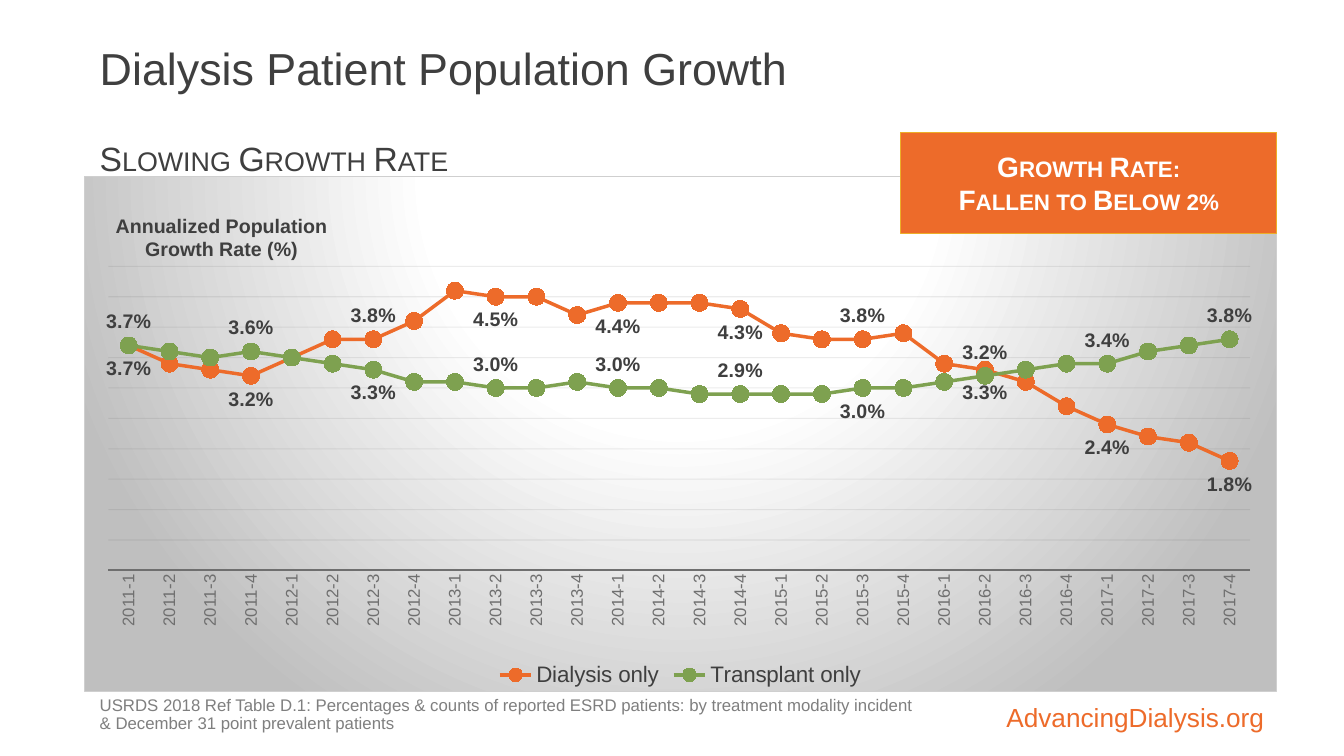
from dataclasses import dataclass

from lxml import etree
from pptx import Presentation
from pptx import util as u
from pptx.chart.data import CategoryChartData
from pptx.dml.color import RGBColor
from pptx.enum import chart as ch, shapes, text
from pptx.oxml import parse_xml
from pptx.oxml.ns import nsdecls, qn


@dataclass(frozen=True)
class Theme:
    font: str = "Arial"
    ink: str = "3F3F3F"
    muted: str = "7F7F7F"
    axis: str = "6F6F6F"
    grid: str = "494949"
    border: str = "CFCFCF"
    panel: str = "BFBFBF"
    white: str = "FFFFFF"
    orange: str = "ED6B2A"
    gold: str = "EDAE28"
    green: str = "7EA150"
    title: float = 32
    subtitle: float = 24
    callout: float = 20
    link: float = 18.7
    legend: float = 16
    label: float = 14
    small: float = 12


T = Theme()
PX = 9525  # EMU per pixel, 96 pixels to the inch

QUARTERS = [f"{year}-{q}" for year in range(2011, 2018) for q in range(1, 5)]
DIALYSIS = [3.7, 3.4, 3.3, 3.2, 3.5, 3.8, 3.8, 4.1, 4.6, 4.5, 4.5, 4.2, 4.4, 4.4,
            4.4, 4.3, 3.9, 3.8, 3.8, 3.9, 3.4, 3.3, 3.1, 2.7, 2.4, 2.2, 2.1, 1.8]
TRANSPLANT = [3.7, 3.6, 3.5, 3.6, 3.5, 3.4, 3.3, 3.1, 3.1, 3.0, 3.0, 3.1, 3.0, 3.0,
              2.9, 2.9, 2.9, 2.9, 3.0, 3.0, 3.1, 3.2, 3.3, 3.4, 3.4, 3.6, 3.7, 3.8]
LABEL_EVERY = 3
SWAPPED = [QUARTERS.index(q) for q in ("2012-3", "2015-3")]  # labels on the other side
ABOVE, BELOW = ch.XL_LABEL_POSITION.ABOVE, ch.XL_LABEL_POSITION.BELOW


def px(*values):
    return [v * PX for v in values]


def rgb(colour):
    return RGBColor.from_string(colour)


def style_font(font, size, colour, bold=False):
    font.name, font.size, font.bold = T.font, u.Pt(size), bold
    font.color.rgb = rgb(colour)


def write(sp, lines, colour, sizes, align=text.PP_ALIGN.LEFT, anchor=text.MSO_ANCHOR.TOP,
          bold=False, small_caps=(), spacing=1.0, insets=(7, 4, 7, 4)):
    """Fill a shape with one paragraph per line; small_caps lists line numbers."""
    tf = sp.text_frame
    tf.text = "\n".join(lines)
    tf.word_wrap, tf.auto_size = True, text.MSO_AUTO_SIZE.NONE
    tf.vertical_anchor = anchor
    tf.margin_left, tf.margin_top, tf.margin_right, tf.margin_bottom = px(*insets)
    for i, (p, size) in enumerate(zip(tf.paragraphs, sizes)):
        p.alignment, p.line_spacing, p.space_before = align, spacing, u.Pt(0)
        for r in p.runs:
            style_font(r.font, size, colour, bold)
            if i in small_caps:
                r.font._element.set("cap", "small")
    return tf


def add_text(s, box, lines, colour, size, **style):
    sp = s.shapes.add_textbox(*px(*box))
    write(sp, lines, colour, [size] * len(lines), **style)


def add_title(s):
    sp = s.shapes.title
    sp.left, sp.top, sp.width, sp.height = px(88, 38, 679, 139)
    tf = write(sp, ["Dialysis Patient Population Growth", "Slowing Growth Rate"], T.ink,
               [T.title, T.subtitle], anchor=text.MSO_ANCHOR.MIDDLE,
               small_caps=(1,), spacing=0.9)
    tf.paragraphs[1].space_before = u.Pt(34)


def add_callout(s):
    sp = s.shapes.add_shape(shapes.MSO_SHAPE.RECTANGLE, *px(858, 126, 358, 96))
    sp.shadow.inherit = False
    sp.fill.solid()
    sp.fill.fore_color.rgb = rgb(T.orange)
    sp.line.color.rgb = rgb(T.gold)
    sp.line.width = u.Pt(0.5)
    write(sp, ["Growth Rate:", "Fallen to Below 2%"], T.white, [T.callout] * 2,
          align=text.PP_ALIGN.CENTER, anchor=text.MSO_ANCHOR.MIDDLE,
          bold=True, small_caps=(0, 1))


def style_series(series, colour, position, swapped_position):
    series.smooth = False
    series.format.line.color.rgb = rgb(colour)
    series.format.line.width = u.Pt(2.5)
    marker = series.marker
    marker.style, marker.size = ch.XL_MARKER_STYLE.CIRCLE, 12
    marker.format.fill.solid()
    marker.format.fill.fore_color.rgb = rgb(colour)
    marker.format.line.color.rgb = rgb(colour)

    labels = series.data_labels
    labels.show_value, labels.position = True, position
    labels.number_format, labels.number_format_is_linked = "0.0%", False
    style_font(labels.font, T.label, T.ink, bold=True)
    # Only every third quarter keeps its label
    unlabelled = [i for i in range(len(QUARTERS)) if i % LABEL_EVERY]
    for place, i in enumerate(unlabelled):
        labels._element.insert(place, parse_xml(
            f'<c:dLbl {nsdecls("c")}><c:idx val="{i}"/><c:delete val="1"/></c:dLbl>'))
    # Where the lines part the other way, labels move to the outer side
    for i in SWAPPED:
        label = series.points[i].data_label
        style_font(label.font, T.label, T.ink, bold=True)
        label.position = swapped_position


def style_axes(chart):
    cat, val = chart.category_axis, chart.value_axis
    cat.major_tick_mark = cat.minor_tick_mark = ch.XL_TICK_MARK.NONE
    cat.format.line.color.rgb = rgb(T.axis)
    cat.format.line.width = u.Pt(1.5)
    style_font(cat.tick_labels.font, T.small, T.axis)
    body = cat._element.find(qn("c:txPr")).find(qn("a:bodyPr"))
    body.set("rot", "-5400000")
    body.set("vert", "horz")

    val.minimum_scale, val.maximum_scale, val.major_unit = 0, 0.05, 0.005
    val.visible, val.has_major_gridlines = False, True
    line = val.major_gridlines.format.line
    line.color.rgb = rgb(T.grid)
    line.width = u.Pt(0.75)
    clr = val.major_gridlines._xAx.find(".//" + qn("a:srgbClr"))
    etree.SubElement(clr, qn("a:alpha")).set("val", "10000")


def style_panel(chart):
    """Radial background, thin border and fixed plot area."""
    stops = "".join(f'<a:gs pos="{pos}000"><a:srgbClr val="{c}"/></a:gs>'
                    for pos, c in ((0, T.white), (39, T.white), (100, T.panel)))
    chart._chartSpace.find(qn("c:chart")).addnext(parse_xml(
        f'<c:spPr {nsdecls("c", "a")}><a:gradFill><a:gsLst>{stops}</a:gsLst>'
        '<a:path path="circle"><a:fillToRect l="50000" t="-80000" r="50000" b="180000"/>'
        '</a:path></a:gradFill><a:ln w="9525"><a:solidFill>'
        f'<a:srgbClr val="{T.border}"/></a:solidFill></a:ln></c:spPr>'))

    plot_area = chart._chartSpace.find(".//" + qn("c:plotArea"))
    for old in plot_area.findall(qn("c:layout")):
        plot_area.remove(old)
    sides = "".join(f'<c:{k} val="{v}"/>' for k, v in (
        ("xMode", "edge"), ("yMode", "edge"),
        ("x", 0.02), ("y", 0.174), ("w", 0.958), ("h", 0.591)))
    plot_area.insert(0, parse_xml(
        f'<c:layout {nsdecls("c")}><c:manualLayout><c:layoutTarget val="inner"/>'
        f'{sides}</c:manualLayout></c:layout>'))


def add_growth_chart(s):
    data = CategoryChartData(number_format="0.0%")
    data.categories = QUARTERS
    for name, percents in (("Dialysis only", DIALYSIS), ("Transplant only", TRANSPLANT)):
        data.add_series(name, [round(v / 100, 3) for v in percents])
    chart = s.shapes.add_chart(ch.XL_CHART_TYPE.LINE_MARKERS,
                               *px(80, 168, 1136, 491), data).chart
    chart.has_title = False
    style_font(chart.font, 10, T.ink)
    chart.plots[0].vary_by_categories = False
    chart.has_legend = True
    chart.legend.position = ch.XL_LEGEND_POSITION.BOTTOM
    chart.legend.include_in_layout = False
    style_font(chart.legend.font, T.legend, T.ink)
    dialysis, transplant = chart.plots[0].series
    style_series(dialysis, T.orange, BELOW, ABOVE)
    style_series(transplant, T.green, ABOVE, BELOW)
    style_axes(chart)
    style_panel(chart)


def main():
    prs = Presentation()
    prs.slide_width, prs.slide_height = px(1280, 720)
    s = prs.slides.add_slide(prs.slide_layouts[5])
    # Heading, chart and its caption
    add_title(s)
    add_growth_chart(s)
    add_text(s, (96, 200, 230, 52), ["Annualized Population Growth Rate (%)"], T.ink, T.label,
             align=text.PP_ALIGN.CENTER, anchor=text.MSO_ANCHOR.MIDDLE, bold=True)
    add_callout(s)
    # Footer
    add_text(s, (88, 660, 798, 30),
             ["USRDS 2018 Ref Table D.1: Percentages & counts of reported ESRD patients: "
              "by treatment modality incident & December 31 point prevalent patients"],
             T.muted, T.small, spacing=0.9)
    add_text(s, (780, 639, 435, 59), ["AdvancingDialysis.org"], T.orange, T.link,
             align=text.PP_ALIGN.RIGHT, anchor=text.MSO_ANCHOR.BOTTOM,
             spacing=0.9, insets=(11, 0, 11, 0))
    prs.save("out.pptx")


if __name__ == "__main__":
    main()
